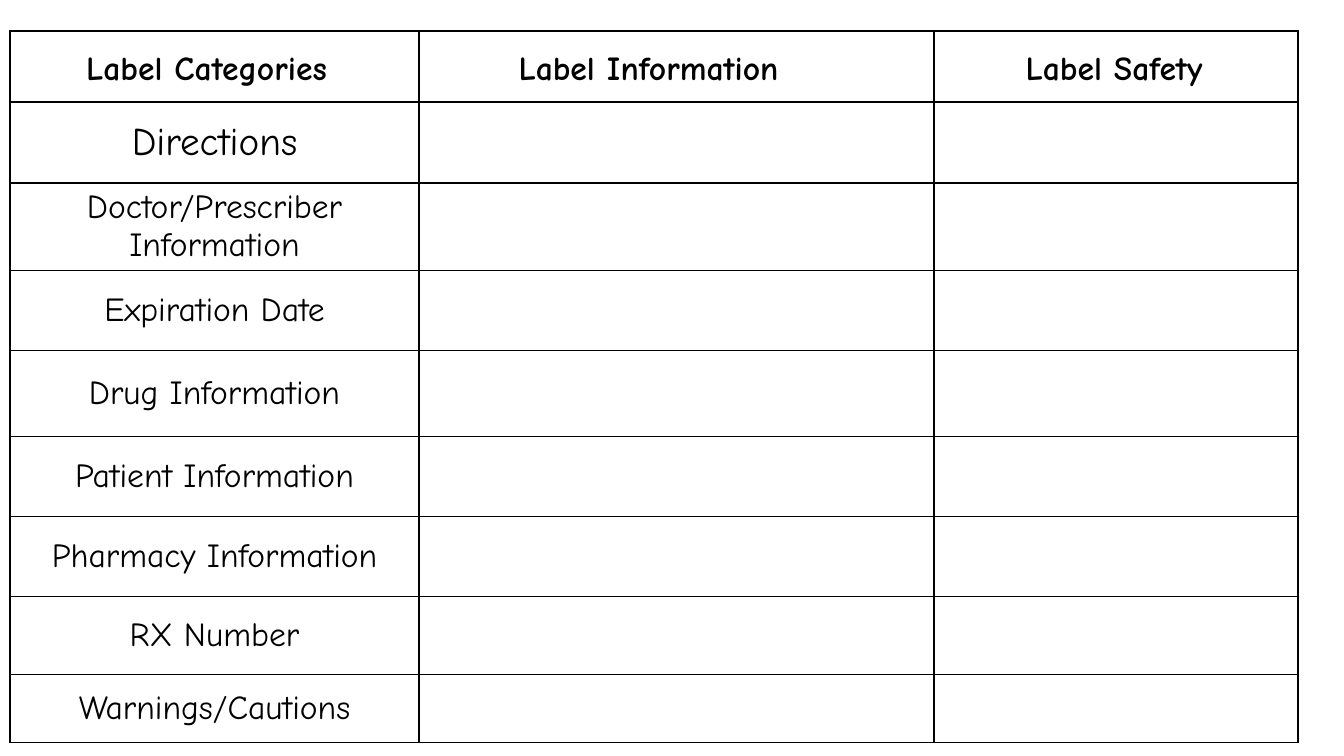
from typing import NamedTuple

from lxml import etree
from pptx import Presentation
from pptx.dml.color import RGBColor
from pptx.enum import text as txt
from pptx.oxml import ns
from pptx.util import Emu, Pt

PX = 9071
FONT = "Comic Neue"
BLACK = RGBColor(0, 0, 0)
WHITE = RGBColor(255, 255, 255)


class Head(NamedTuple):
    label: str
    left: int
    width: int


class Row(NamedTuple):
    label: str
    height: int
    size: int = 24


HEADS = [
    Head("Label Categories", 0, 413),
    Head("Label Information", 442, 413),
    Head("Label Safety", 930, 368),
]
COLS = [409, 515, 364]
ROWS = [
    Row("", 71),
    Row("Directions", 81, 28),
    Row("Doctor/Prescriber Information", 87),
    Row("Expiration Date", 80),
    Row("Drug Information", 86),
    Row("Patient Information", 80),
    Row("Pharmacy Information", 80),
    Row("RX Number", 78),
    Row("Warnings/Cautions", 68),
]


def px(count: int) -> Emu:
    return Emu(count * PX)


def write(frame, label: str, size: int, bold: bool) -> None:
    para = frame.paragraphs[0]
    para.alignment = txt.PP_ALIGN.CENTER
    run = para.add_run()
    run.text = label
    run.font.name = FONT
    run.font.size = Pt(size)
    run.font.bold = bold
    run.font.color.rgb = BLACK


def frame_cell(cell) -> None:
    props = cell._tc.get_or_add_tcPr()
    for side in ("a:lnL", "a:lnR", "a:lnT", "a:lnB"):
        line = etree.SubElement(props, ns.qn(side), w=str(Pt(1)))
        fill = etree.SubElement(line, ns.qn("a:solidFill"))
        etree.SubElement(fill, ns.qn("a:srgbClr"), val=str(BLACK))
    cell.fill.solid()
    cell.fill.fore_color.rgb = WHITE


def draw_grid(slide, left: int, top: int) -> None:
    high = sum(row.height for row in ROWS)
    grid = slide.shapes.add_table(
        len(ROWS), len(COLS), px(left), px(top), px(sum(COLS)), px(high)
    ).table
    grid.first_row = False
    grid.horz_banding = False
    for col, width in zip(grid.columns, COLS):
        col.width = px(width)
    for index, row in enumerate(ROWS):
        grid.rows[index].height = px(row.height)
        for cell in grid.rows[index].cells:
            frame_cell(cell)
        if row.label:
            cell = grid.cell(index, 0)
            cell.vertical_anchor = txt.MSO_ANCHOR.MIDDLE
            write(cell.text_frame, row.label, row.size, False)


def draw_head(slide, head: Head) -> None:
    box = slide.shapes.add_textbox(px(head.left), px(42), px(head.width), px(50))
    frame = box.text_frame
    frame.word_wrap = True
    frame.auto_size = txt.MSO_AUTO_SIZE.SHAPE_TO_FIT_TEXT
    write(frame, head.label, 24, True)


def main() -> None:
    deck = Presentation()
    deck.slide_width = px(1344)
    deck.slide_height = px(756)
    slide = deck.slides.add_slide(deck.slide_layouts[6])
    draw_grid(slide, 10, 31)
    for head in HEADS:
        draw_head(slide, head)
    deck.save("out.pptx")


if __name__ == "__main__":
    main()
